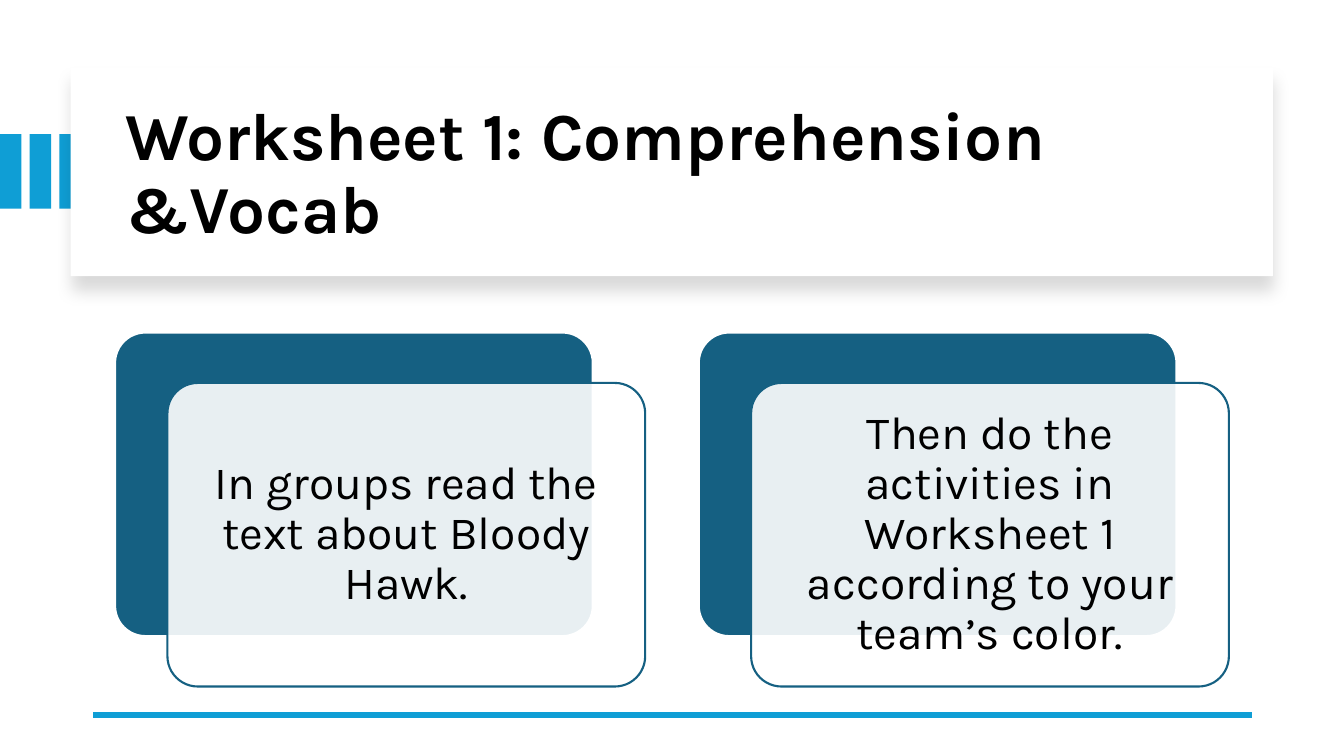
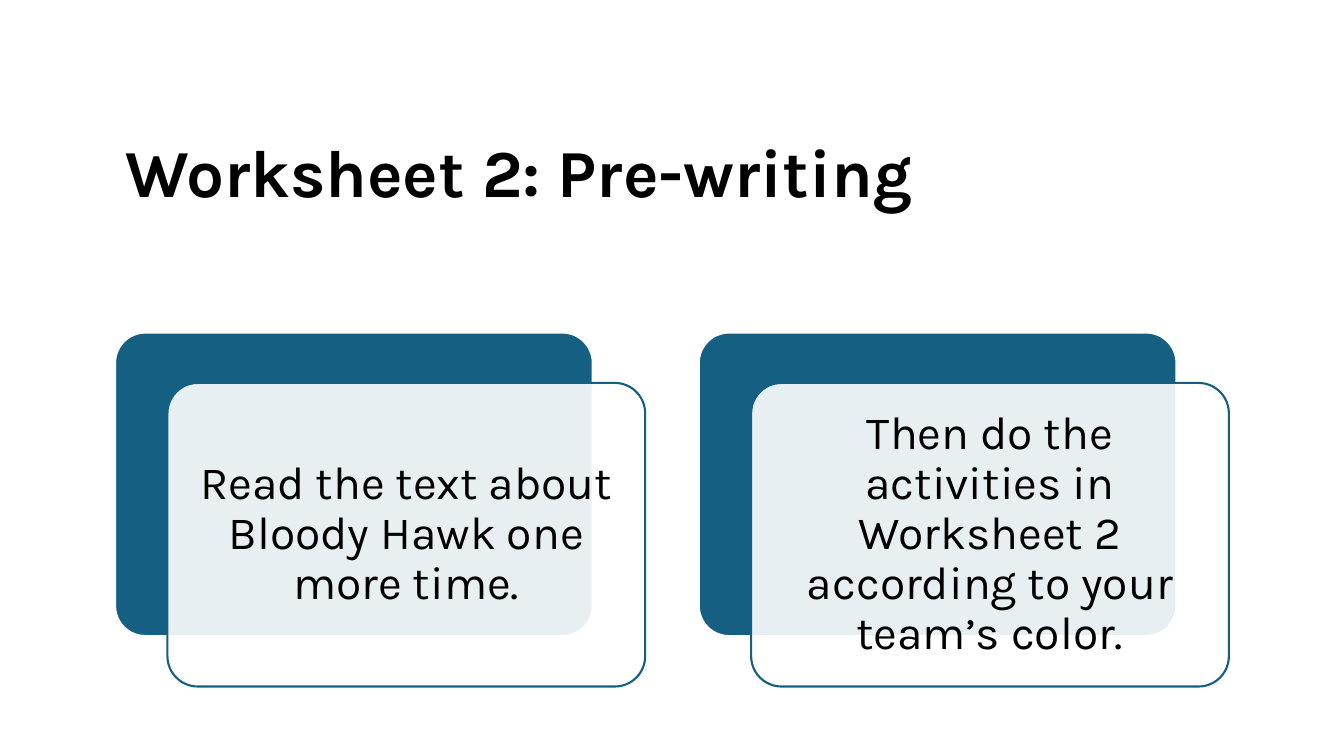
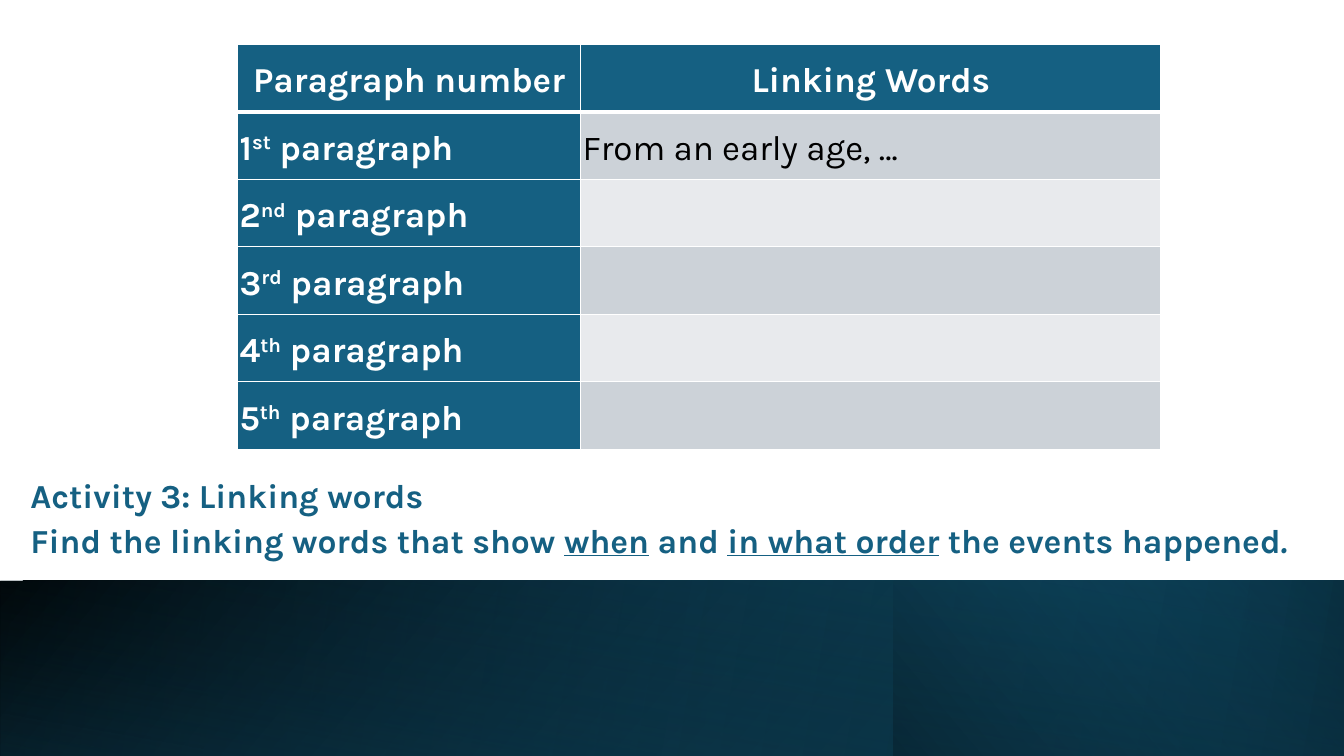
from dataclasses import dataclass

from lxml import etree
from pptx import Presentation
from pptx.dml.color import RGBColor
from pptx.enum.shapes import MSO_CONNECTOR as CONNECTOR, MSO_SHAPE as SHAPE
from pptx.enum.text import MSO_ANCHOR as ANCHOR, MSO_AUTO_SIZE as AUTO_SIZE, PP_ALIGN as ALIGN
from pptx.oxml import parse_xml
from pptx.oxml.ns import nsdecls, qn
from pptx.util import Cm, Pt


@dataclass(frozen=True)
class Theme:
    font: str = "Karla"
    black: str = "000000"
    white: str = "FFFFFF"
    teal: str = "156082"
    navy: str = "0B3041"
    sky: str = "0F9ED5"
    row_dark: str = "CCD2D8"
    row_light: str = "E8EAED"
    title_size: int = 48
    card_size: int = 33
    table_size: int = 25
    activity_size: int = 24


THEME = Theme()
SLIDE_W, SLIDE_H = 33.87, 19.05
TITLE_BOX = (2.9, 2.26, 28.27, 4.32)
ORDINALS = ("st", "nd", "rd", "th", "th")


# Shared helpers
def rgb(code):
    return RGBColor.from_string(code)


def box(*lengths):
    return [Cm(length) for length in lengths]


def add_run(paragraph, text, size, color, bold=False):
    run = paragraph.add_run()
    run.text = text
    run.font.name = THEME.font
    run.font.size = Pt(size)
    run.font.bold = bold
    run.font.color.rgb = rgb(color)
    return run


def set_paragraph(paragraph, align, line_spacing=0.9, after=0):
    paragraph.alignment = align
    paragraph.line_spacing = line_spacing
    paragraph.space_before = Pt(0)
    paragraph.space_after = Pt(after)


def set_insets(owner, inset):
    owner.margin_left = owner.margin_right = Cm(inset)
    owner.margin_top = owner.margin_bottom = Cm(inset)


def add_block(shapes, preset, place, fill=None, line=None):
    block = shapes.add_shape(preset, *box(*place))
    block.shadow.inherit = False
    if fill:
        block.fill.solid()
        block.fill.fore_color.rgb = rgb(fill)
    if line:
        block.line.color.rgb = rgb(line)
        block.line.width = Pt(1.5)
    else:
        block.line.fill.background()
    return block


def place_title(slide, place, anchor=ANCHOR.MIDDLE):
    title = slide.shapes.title
    title.left, title.top, title.width, title.height = box(*place)
    frame = title.text_frame
    frame.word_wrap = True
    frame.auto_size = AUTO_SIZE.NONE
    frame.vertical_anchor = anchor
    # Bring the title in front of the parts drawn so far
    slide.shapes._spTree.append(title._element)
    return frame


def new_slide(prs):
    return prs.slides.add_slide(prs.slide_layouts[5])


# Worksheet slides
def add_title_panel(slide):
    stripes = slide.shapes.add_group_shape().shapes
    for i in range(3):
        add_block(stripes, SHAPE.RECTANGLE, (i * 0.75, 3.38, 0.54, 1.88), THEME.sky)
    panel = add_block(slide.shapes, SHAPE.RECTANGLE, (1.78, 1.7, 30.3, 5.26), THEME.white)
    effects = panel._element.spPr.find(qn("a:effectLst"))
    effects.append(parse_xml(
        f'<a:outerShdw {nsdecls("a")} blurRad="{Pt(11)}" dist="{Pt(10)}" dir="5400000" '
        f'algn="t" rotWithShape="0"><a:srgbClr val="{THEME.black}">'
        '<a:alpha val="15000"/></a:srgbClr></a:outerShdw>'))


def add_bottom_rule(slide):
    rule = slide.shapes.add_connector(CONNECTOR.STRAIGHT, *box(31.55, 18.01, 2.34, 18.01))
    rule.line.color.rgb = rgb(THEME.sky)
    rule.line.width = Pt(4.5)
    etree.SubElement(rule._element.spPr, qn("a:effectLst"))


def add_card(slide, left, text):
    top, width, height = 8.38, 12.04, 7.65
    layers = slide.shapes.add_group_shape().shapes
    back = add_block(layers, SHAPE.ROUNDED_RECTANGLE, (left, top, width, height),
                     THEME.teal, THEME.white)
    front = add_block(layers, SHAPE.ROUNDED_RECTANGLE,
                      (left + 1.32, top + 1.27, width, height), THEME.white, THEME.teal)
    back.adjustments[0] = front.adjustments[0] = 0.1
    white = front._element.spPr.find(qn("a:solidFill"))[0]
    etree.SubElement(white, qn("a:alpha"), val="90000")

    frame = front.text_frame
    frame.word_wrap = True
    frame.vertical_anchor = ANCHOR.MIDDLE
    set_insets(frame, 0.36)
    set_paragraph(frame.paragraphs[0], ALIGN.CENTER)
    add_run(frame.paragraphs[0], text, THEME.card_size, THEME.black)


def add_worksheet_slide(prs, heading, steps, decorated=False):
    slide = new_slide(prs)
    if decorated:
        add_title_panel(slide)
    title = place_title(slide, TITLE_BOX).paragraphs[0]
    set_paragraph(title, ALIGN.LEFT)
    add_run(title, heading, THEME.title_size, THEME.black, bold=True)
    if decorated:
        add_bottom_rule(slide)
    for i, step in enumerate(steps):
        add_card(slide, 2.9 + i * 14.71, step)


# Linking words slide
def add_gradient_band(slide, left, stops, angle, rotated=False):
    band = add_block(slide.shapes, SHAPE.RECTANGLE, (left, 14.63, SLIDE_W - left, 4.42))
    if rotated:
        band.rotation = 180
    else:
        band._element.spPr.find(qn("a:xfrm")).set("flipH", "1")
    stop_xml = "".join(
        f'<a:gs pos="{pos * 1000}"><a:srgbClr val="{color}">'
        f'<a:alpha val="{opacity * 1000}"/></a:srgbClr></a:gs>'
        for pos, color, opacity in stops)
    gradient = parse_xml(
        f'<a:gradFill {nsdecls("a")} rotWithShape="1"><a:gsLst>{stop_xml}</a:gsLst>'
        f'<a:lin ang="{angle * 60000}" scaled="0"/></a:gradFill>')
    band._element.spPr.find(qn("a:prstGeom")).addnext(gradient)


def add_footer_bands(slide):
    black, teal, navy = THEME.black, THEME.teal, THEME.navy
    add_gradient_band(slide, 0, [(0, black, 100), (100, teal, 100)], 140)
    add_gradient_band(slide, 0, [(0, teal, 0), (100, navy, 100)], 170)
    add_gradient_band(slide, 22.53, [(0, navy, 100), (100, teal, 0)], 220)
    add_gradient_band(slide, 0, [(0, black, 0), (99, navy, 55)], 280, rotated=True)


def add_activity_text(slide):
    frame = place_title(slide, (0.51, 12.04, 33.02, 3.1), ANCHOR.TOP)
    frame.margin_top = Cm(0.05)
    lines = (
        [("Activity 3: Linking words", False)],
        [("Find the linking words that show ", False), ("when", True), (" and ", False),
         ("in what order", True), (" the events happened", False)],
    )
    for i, line in enumerate(lines):
        paragraph = frame.add_paragraph() if i else frame.paragraphs[0]
        set_paragraph(paragraph, ALIGN.LEFT, after=6)
        for text, underlined in line:
            run = add_run(paragraph, text, THEME.activity_size, THEME.teal, bold=True)
            run.font.underline = underlined
    full_stop = add_run(paragraph, ".", THEME.activity_size, THEME.teal, bold=True)
    full_stop.font.italic = True


def style_cell(cell, fill, top=1, bottom=1):
    for side, width in (("L", 1), ("R", 1), ("T", top), ("B", bottom)):
        cell._tc.get_or_add_tcPr().append(parse_xml(
            f'<a:ln{side} {nsdecls("a")} w="{Pt(width)}"><a:solidFill>'
            f'<a:srgbClr val="{THEME.white}"/></a:solidFill></a:ln{side}>'))
    cell.fill.solid()
    cell.fill.fore_color.rgb = rgb(fill)
    cell.vertical_anchor = ANCHOR.MIDDLE
    set_insets(cell, 0.05)


def write_cell(cell, parts, color=THEME.white, bold=True, align=ALIGN.LEFT):
    paragraph = cell.text_frame.paragraphs[0]
    set_paragraph(paragraph, align, line_spacing=1.15, after=8)
    for text in parts:
        run = add_run(paragraph, text, THEME.table_size, color, bold)
        if text in ORDINALS:
            run.font._element.set("baseline", "30000")


def add_linking_table(slide):
    rows, row_height = len(ORDINALS) + 1, 1.7
    table = slide.shapes.add_table(
        rows, 2, *box(5.99, 1.12, 23.27, rows * row_height)).table
    table.first_row = table.horz_banding = False
    for column, width in zip(table.columns, (8.64, 14.63)):
        column.width = Cm(width)
    for row in table.rows:
        row.height = Cm(row_height)

    for i, heading in enumerate(("Paragraph number", "Linking Words")):
        style_cell(table.cell(0, i), THEME.teal, bottom=3)
        write_cell(table.cell(0, i), [heading], align=ALIGN.CENTER)
    for number, ordinal in enumerate(ORDINALS, start=1):
        label, answer = table.cell(number, 0), table.cell(number, 1)
        top = 3 if number == 1 else 1
        style_cell(label, THEME.teal, top)
        style_cell(answer, THEME.row_dark if number % 2 else THEME.row_light, top)
        write_cell(label, [str(number), ordinal, " paragraph"])
    write_cell(table.cell(1, 1), ["From an early age, …"], THEME.black, bold=False)


def add_linking_slide(prs):
    slide = new_slide(prs)
    add_footer_bands(slide)
    add_activity_text(slide)
    add_linking_table(slide)


def main():
    prs = Presentation()
    prs.slide_width, prs.slide_height = box(SLIDE_W, SLIDE_H)
    add_worksheet_slide(prs, "Worksheet 1: Comprehension &Vocab", (
        "In groups read the text about Bloody Hawk.",
        "Then do the activities in Worksheet 1 according to your team’s color.",
    ), decorated=True)
    add_worksheet_slide(prs, "Worksheet 2: Pre-writing", (
        "Read the text about Bloody Hawk one more time.",
        "Then do the activities in Worksheet 2 according to your team’s color.",
    ))
    add_linking_slide(prs)
    prs.save("out.pptx")


if __name__ == "__main__":
    main()
